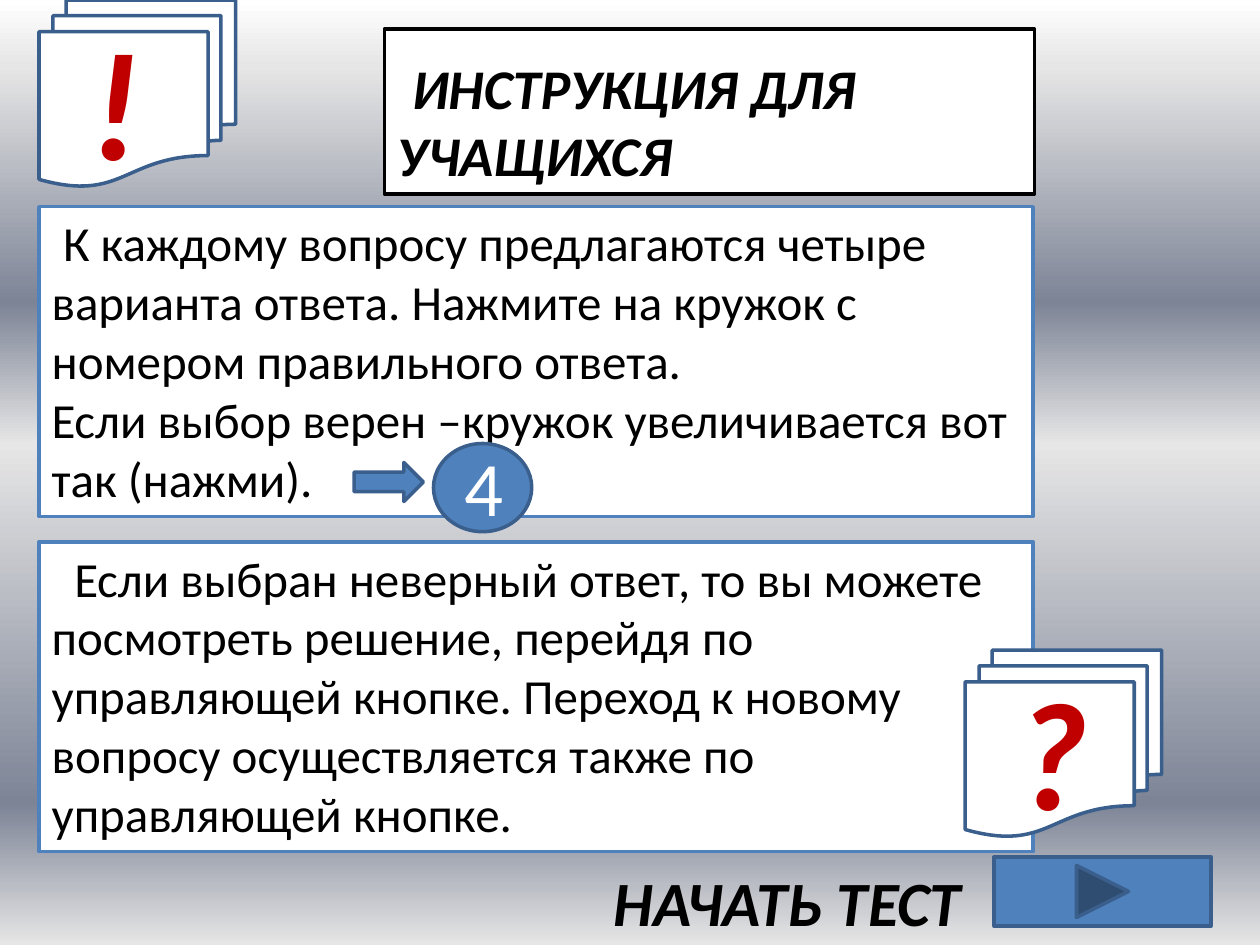
from dataclasses import dataclass

from lxml import etree
from pptx import Presentation
from pptx.dml.color import RGBColor
from pptx.enum.shapes import MSO_SHAPE
from pptx.enum.text import MSO_ANCHOR, MSO_AUTO_SIZE, PP_ALIGN
from pptx.oxml.ns import qn
from pptx.util import Inches, Pt

ELLIPSE = MSO_SHAPE.OVAL
ARROW = MSO_SHAPE.RIGHT_ARROW
NEXT_BUTTON = MSO_SHAPE.ACTION_BUTTON_FORWARD_OR_NEXT
CARDS = MSO_SHAPE.FLOWCHART_MULTIDOCUMENT
TOP, BOTTOM = MSO_ANCHOR.TOP, MSO_ANCHOR.BOTTOM
LEFT = PP_ALIGN.LEFT
NO_AUTOFIT = MSO_AUTO_SIZE.NONE
TWO_CONTENT = 3


@dataclass(frozen=True)
class Theme:
    font: str = "Calibri"
    ink: str = "000000"
    paper: str = "FFFFFF"
    accent: str = "4F81BD"
    outline: str = "3A5F8C"
    alert: str = "C00000"
    title: int = 32
    body: int = 28
    start: int = 36
    number: int = 44
    sign: int = 88
    line: int = 2
    backdrop: tuple = ((0, "FFFFFF"), (7, "E6E6E6"), (32, "7D8496"),
                       (47, "E6E6E6"), (85, "7D8496"), (100, "E6E6E6"))


class InstructionSlide:
    def __init__(self, deck, theme):
        self.theme = theme
        self.slide = deck.slides.add_slide(deck.slide_layouts[TWO_CONTENT])

    def background(self):
        fill = self.slide.background.fill
        fill.gradient()
        fill.gradient_angle = 270
        stops = next(self.slide.element.iter(qn("a:gsLst")))
        for stop in list(stops):
            stops.remove(stop)
        for percent, color in self.theme.backdrop:
            stop = etree.SubElement(stops, qn("a:gs"), pos=str(percent * 1000))
            etree.SubElement(stop, qn("a:srgbClr"), val=color)

    def paint(self, shape, fill, line):
        shape.fill.solid()
        shape.fill.fore_color.rgb = RGBColor.from_string(fill)
        shape.line.color.rgb = RGBColor.from_string(line)
        shape.line.width = Pt(self.theme.line)

    def set_text(self, shape, paragraphs, size, color, strong=False, indent=0, anchor=TOP):
        frame = shape.text_frame
        frame.word_wrap = True
        frame.auto_size = NO_AUTOFIT
        frame.vertical_anchor = anchor
        frame.text = "\n".join(paragraphs)
        for position, paragraph in enumerate(frame.paragraphs):
            properties = paragraph._p.get_or_add_pPr()
            properties.set("marL", "0")
            properties.set("indent", str(0 if position else Inches(indent)))
            paragraph.space_before = Pt(0)
            etree.SubElement(properties, qn("a:buNone"))
            paragraph.alignment = LEFT
            font = paragraph.font
            font.name = self.theme.font
            font.size = Pt(size)
            font.bold = font.italic = strong
            font.color.rgb = RGBColor.from_string(color)

    def panel(self, idx, box, paragraphs, size, line, **style):
        holder = self.slide.placeholders[idx]
        holder.left, holder.top, holder.width, holder.height = map(Inches, box)
        self.paint(holder, self.theme.paper, line)
        self.set_text(holder, paragraphs, size, self.theme.ink, **style)

    def shape(self, kind, box, fill, shapes=None):
        shapes = shapes or self.slide.shapes
        drawn = shapes.add_shape(kind, *map(Inches, box))
        drawn.shadow.inherit = False
        self.paint(drawn, fill, self.theme.outline)

    def label(self, text, box, size, color, strong=False, shapes=None):
        shapes = shapes or self.slide.shapes
        caption = shapes.add_textbox(*map(Inches, box))
        self.set_text(caption, [text], size, color, strong)

    def badge(self, kind, box, fill, text, text_box, size, color, strong=False):
        members = self.slide.shapes.add_group_shape().shapes
        self.shape(kind, box, fill, members)
        self.label(text, text_box, size, color, strong, members)

    def sign_cards(self, sign, left, top):
        theme = self.theme
        self.badge(CARDS, (left, top, 1.56, 1.48), theme.paper, sign,
                   (left + 0.31, top, 0.78, 1.58), theme.sign, theme.alert, True)


def main():
    deck = Presentation()
    deck.slide_width, deck.slide_height = Inches(10), Inches(7.5)
    theme = Theme()
    page = InstructionSlide(deck, theme)
    page.background()

    page.panel(0, (3.05, 0.23, 5.16, 1.31), ["ИНСТРУКЦИЯ ДЛЯ УЧАЩИХСЯ"],
               theme.title, theme.ink, strong=True, indent=0.12, anchor=BOTTOM)
    page.panel(1, (0.31, 1.64, 7.89, 2.46), [
        "К каждому вопросу предлагаются четыре варианта ответа. "
        "Нажмите на кружок с номером правильного ответа.",
        "Если выбор верен –кружок увеличивается вот так (нажми).",
    ], theme.body, theme.accent, indent=0.09)
    page.panel(2, (0.31, 4.3, 7.89, 2.46), [
        "Если выбран неверный ответ, то вы можете посмотреть решение, "
        "перейдя по управляющей кнопке. Переход к новому вопросу "
        "осуществляется также по управляющей кнопке.",
    ], theme.body, theme.accent, indent=0.18)

    page.badge(ELLIPSE, (3.44, 3.52, 0.78, 0.7), theme.accent,
               "4", (3.59, 3.44, 0.5, 0.84), theme.number, theme.paper)
    page.shape(NEXT_BUTTON, (7.89, 6.8, 1.72, 0.55), theme.accent)
    page.label("НАЧАТЬ ТЕСТ", (4.77, 6.8, 3.98, 0.71), theme.start, theme.ink, True)
    page.shape(ARROW, (2.81, 3.67, 0.55, 0.31), theme.accent)
    page.sign_cards("!", 0.31, 0)
    page.sign_cards("?", 7.66, 5.16)

    deck.save("out.pptx")


if __name__ == "__main__":
    main()
